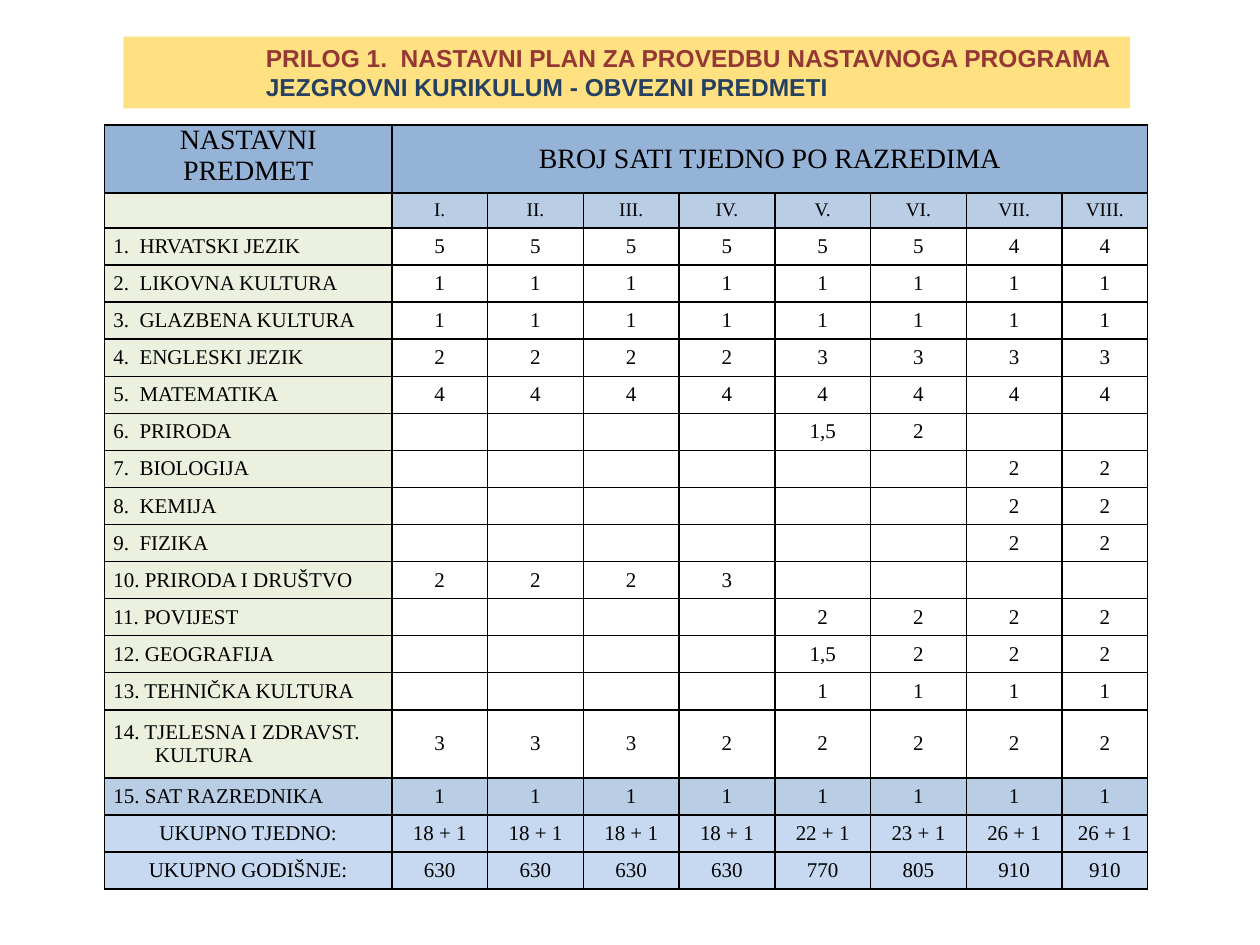
from dataclasses import dataclass

from lxml import etree
from pptx import Presentation
from pptx.dml.color import RGBColor
from pptx.enum.text import MSO_ANCHOR, MSO_AUTO_SIZE, PP_ALIGN
from pptx.oxml.ns import qn
from pptx.util import Inches, Pt

LEFT, CENTER = PP_ALIGN.LEFT, PP_ALIGN.CENTER
TOP, MIDDLE = MSO_ANCHOR.TOP, MSO_ANCHOR.MIDDLE
NO_AUTOFIT = MSO_AUTO_SIZE.NONE
TITLE_ONLY = 5


@dataclass(frozen=True)
class Theme:
    title_font: str = "Arial"
    table_font: str = "Times New Roman"
    title_size: int = 14
    heading_size: int = 16
    grade_size: int = 11
    body_size: int = 12
    ink: str = "000000"
    banner: str = "FFE181"
    title_red: str = "953735"
    title_navy: str = "254061"
    heading: str = "95B3D7"
    grade: str = "B9CDE5"
    subject: str = "EBF1DE"
    total: str = "C6D9F1"


THEME = Theme()

TITLE_LINES = [
    ("PRILOG 1.  NASTAVNI PLAN ZA PROVEDBU NASTAVNOGA PROGRAMA", THEME.title_red),
    ("JEZGROVNI KURIKULUM - OBVEZNI PREDMETI", THEME.title_navy),
]
HEADINGS = ["NASTAVNI PREDMET", "BROJ SATI TJEDNO PO RAZREDIMA"]
GRADES = ["I.", "II.", "III.", "IV.", "V.", "VI.", "VII.", "VIII."]
NONE_2, NONE_4, NONE_6 = [""] * 2, [""] * 4, [""] * 6
SUBJECTS = [
    ("1.  HRVATSKI JEZIK", ["5"] * 6 + ["4"] * 2),
    ("2.  LIKOVNA KULTURA", ["1"] * 8),
    ("3.  GLAZBENA KULTURA", ["1"] * 8),
    ("4.  ENGLESKI JEZIK", ["2"] * 4 + ["3"] * 4),
    ("5.  MATEMATIKA", ["4"] * 8),
    ("6.  PRIRODA", NONE_4 + ["1,5", "2"] + NONE_2),
    ("7.  BIOLOGIJA", NONE_6 + ["2"] * 2),
    ("8.  KEMIJA", NONE_6 + ["2"] * 2),
    ("9.  FIZIKA", NONE_6 + ["2"] * 2),
    ("10. PRIRODA I DRUŠTVO", ["2"] * 3 + ["3"] + NONE_4),
    ("11. POVIJEST", NONE_4 + ["2"] * 4),
    ("12. GEOGRAFIJA", NONE_4 + ["1,5"] + ["2"] * 3),
    ("13. TEHNIČKA KULTURA", NONE_4 + ["1"] * 4),
    ("14. TJELESNA I ZDRAVST.\nKULTURA", ["3"] * 3 + ["2"] * 5),
]
CLASS_HOUR = ("15. SAT RAZREDNIKA", ["1"] * 8)
TOTALS = [
    ("UKUPNO TJEDNO:", ["18 + 1"] * 4 + ["22 + 1", "23 + 1"] + ["26 + 1"] * 2),
    ("UKUPNO GODIŠNJE:", ["630"] * 4 + ["770", "805"] + ["910"] * 2),
]

# Table grid, in inches
SUBJECT_WIDTH, GRADE_WIDTH, LAST_GRADE_WIDTH = 2.28, 0.76, 0.68
TWO_LINE_HEIGHT, GRADE_HEIGHT = 0.54, 0.28
CONTINUATION_INDENT = 0.33


def set_all(target, values):
    for name, value in values.items():
        setattr(target, name, value)


def add_run(paragraph, text, font, size, color, bold=False):
    run = paragraph.add_run()
    run.text = text
    set_all(run.font, {"name": font, "size": Pt(size), "bold": bold})
    run.font.color.rgb = RGBColor.from_string(color)


def place_title(title, box):
    left, top, width, height = map(Inches, box)
    set_all(title, {"left": left, "top": top, "width": width, "height": height})
    title.fill.solid()
    title.fill.fore_color.rgb = RGBColor.from_string(THEME.banner)
    frame = title.text_frame
    set_all(frame, {
        "word_wrap": True, "auto_size": NO_AUTOFIT, "vertical_anchor": MIDDLE,
        "margin_left": Inches(1.13), "margin_right": 0,
        "margin_top": Inches(0.05), "margin_bottom": Inches(0.05),
    })
    for index, (text, color) in enumerate(TITLE_LINES):
        line = frame.paragraphs[0] if index == 0 else frame.add_paragraph()
        line.alignment = LEFT
        add_run(line, text, THEME.title_font, THEME.title_size, color, bold=True)


def draw_borders(cell):
    properties = cell._tc.get_or_add_tcPr()
    for side in ("a:lnL", "a:lnR", "a:lnT", "a:lnB"):
        border = etree.SubElement(properties, qn(side), w=str(Pt(1)))
        fill = etree.SubElement(border, qn("a:solidFill"))
        etree.SubElement(fill, qn("a:srgbClr"), val=THEME.ink)


def format_cell(cell, text, fill=None, size=THEME.body_size, align=CENTER, anchor=MIDDLE):
    draw_borders(cell)
    if fill:
        cell.fill.solid()
        cell.fill.fore_color.rgb = RGBColor.from_string(fill)
    else:
        cell.fill.background()
    set_all(cell, {
        "margin_left": Inches(0.07), "margin_right": Inches(0.07),
        "margin_top": 0, "margin_bottom": 0, "vertical_anchor": anchor,
    })
    frame = cell.text_frame
    for index, line in enumerate(text.split("\n")):
        paragraph = frame.paragraphs[0] if index == 0 else frame.add_paragraph()
        paragraph.alignment = align
        if index:
            paragraph._p.get_or_add_pPr().set("marL", str(Inches(CONTINUATION_INDENT)))
        if line:
            add_run(paragraph, line, THEME.table_font, size, THEME.ink)
        else:
            paragraph._p.get_or_add_endParaRPr().set("sz", str(size * 100))


def fill_row(table, row, label, hours, label_format, hours_format):
    format_cell(table.cell(row, 0), label, **label_format)
    for column, value in enumerate(hours, start=1):
        format_cell(table.cell(row, column), value, **hours_format)


def add_timetable(slide, box):
    subject_format = {"fill": THEME.subject, "align": LEFT}
    grade_format = {"fill": THEME.grade, "size": THEME.grade_size}
    class_hour_format = {"fill": THEME.grade}
    total_format = {"fill": THEME.total}
    heading_format = {"fill": THEME.heading, "size": THEME.heading_size}

    rows = [(HEADINGS[0], [HEADINGS[1]] + [""] * (len(GRADES) - 1),
             heading_format | {"anchor": TOP}, heading_format),
            ("", GRADES, subject_format, grade_format)]
    rows += [(*subject, subject_format, {}) for subject in SUBJECTS]
    rows.append((*CLASS_HOUR, class_hour_format | {"align": LEFT}, class_hour_format))
    rows += [(*total, total_format, total_format) for total in TOTALS]

    widths = [SUBJECT_WIDTH] + [GRADE_WIDTH] * (len(GRADES) - 1) + [LAST_GRADE_WIDTH]
    special = {0: TWO_LINE_HEIGHT, 1: GRADE_HEIGHT, len(SUBJECTS) + 1: TWO_LINE_HEIGHT}
    plain_height = (box[3] - sum(special.values())) / (len(rows) - len(special))

    table = slide.shapes.add_table(len(rows), len(widths), *map(Inches, box)).table
    set_all(table, {"first_row": False, "horz_banding": False})
    for column, width in zip(table.columns, widths):
        column.width = Inches(width)
    for index, row in enumerate(rows):
        table.rows[index].height = Inches(special.get(index, plain_height))
        fill_row(table, index, *row)
    table.cell(0, 1).merge(table.cell(0, len(GRADES)))


def main():
    deck = Presentation()
    set_all(deck, {"slide_width": Inches(10), "slide_height": Inches(7.5)})
    slide = deck.slides.add_slide(deck.slide_layouts[TITLE_ONLY])
    place_title(slide.shapes.title, (0.98, 0.29, 7.99, 0.57))
    add_timetable(slide, (0.83, 0.99, 8.28, 6.07))
    deck.save("out.pptx")


if __name__ == "__main__":
    main()
